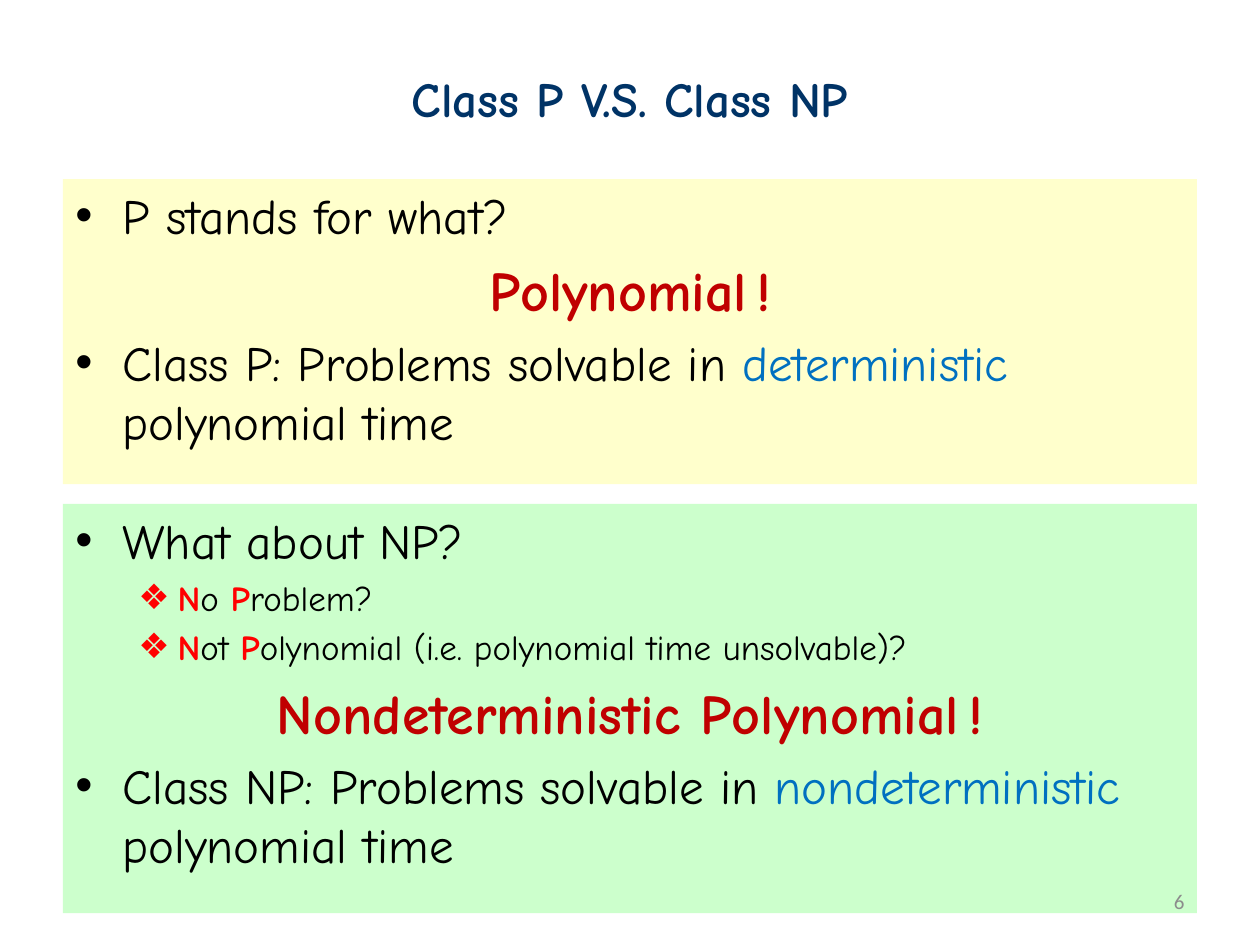
from lxml import etree
from pptx import Presentation
from pptx.dml.color import RGBColor
from pptx.enum.shapes import MSO_SHAPE
from pptx.enum.text import MSO_ANCHOR, PP_ALIGN
from pptx.oxml.ns import qn
from pptx.util import Cm, Pt

RECTANGLE = MSO_SHAPE.RECTANGLE
TOP, MIDDLE = MSO_ANCHOR.TOP, MSO_ANCHOR.MIDDLE
LEFT, CENTER, RIGHT = PP_ALIGN.LEFT, PP_ALIGN.CENTER, PP_ALIGN.RIGHT

NAVY = RGBColor(0x00, 0x33, 0x66)
BLACK = RGBColor(0x00, 0x00, 0x00)
RED = RGBColor(0xFF, 0x00, 0x00)
DARK_RED = RGBColor(0xC0, 0x00, 0x00)
BLUE = RGBColor(0x00, 0x70, 0xC0)
GRAY = RGBColor(0x8C, 0x8C, 0x8C)
YELLOW = RGBColor(0xFF, 0xFF, 0xCC)
GREEN = RGBColor(0xCC, 0xFF, 0xCC)

FONT = "Comic Neue"
MARGIN = Cm(1.27)
CONTENT_WIDTH = Cm(22.86)


def add_span(para, text, size, color=BLACK, bold=False, font=FONT):
    span = para.add_run()
    span.text = text
    span.font.name = font
    span.font.size = Pt(size)
    span.font.bold = bold
    span.font.color.rgb = color


def next_para(frame, size):
    """Return the empty first paragraph, or a new one, spaced by its text size."""
    para = frame.paragraphs[0]
    if para.runs:
        para = frame.add_paragraph()
    para.alignment = LEFT
    para.space_before = Pt(round(size * 0.2, 1))
    return para


def set_bullet(para, char, font, margin, hanging):
    properties = para._p.get_or_add_pPr()
    properties.set("marL", str(margin))
    properties.set("indent", str(-hanging))
    etree.SubElement(properties, qn("a:buFont")).set("typeface", font)
    etree.SubElement(properties, qn("a:buChar")).set("char", char)


def add_point(frame, *spans):
    """Add a main bullet from (text, color) pairs."""
    para = next_para(frame, 28)
    set_bullet(para, "•", "Arial", Cm(0.95), Cm(0.95))
    for text, color in spans:
        add_span(para, text, 28, color)


def add_guess(frame, *words):
    """Add a sub-bullet whose first two words have a red initial."""
    para = next_para(frame, 20)
    para.level = 1
    set_bullet(para, "❖", "DejaVu Sans", Cm(2.06), Cm(0.79))
    for word in words:
        add_span(para, word[0], 20, RED, bold=True)
        add_span(para, word[1:], 20)


def add_answer(frame, text):
    para = next_para(frame, 32)
    para.alignment = CENTER
    for part, size in ((text, 32), (" ", 14), ("!", 32)):
        add_span(para, part, size, DARK_RED, bold=True)


def add_definition(frame, name, manner):
    add_point(frame, (f"Class {name}: Problems solvable in ", BLACK),
              (manner, BLUE), (" polynomial time", BLACK))


def add_panel(page, top, height, color):
    panel = page.shapes.add_shape(RECTANGLE, MARGIN, top, CONTENT_WIDTH, height)
    panel.shadow.inherit = False
    panel.fill.solid()
    panel.fill.fore_color.rgb = color
    panel.line.fill.background()
    frame = panel.text_frame
    frame.word_wrap = True
    frame.vertical_anchor = TOP
    return frame


def set_title(page, text):
    title = page.shapes.title
    title.left, title.top = MARGIN, Cm(0.76)
    title.width, title.height = CONTENT_WIDTH, Cm(2.41)
    title.text_frame.vertical_anchor = MIDDLE
    para = title.text_frame.paragraphs[0]
    para.alignment = CENTER
    add_span(para, text, 28, NAVY, bold=True)


def add_page_number(page, number):
    box = page.shapes.add_textbox(Cm(18.21), Cm(17.65), Cm(5.92), Cm(1.02))
    box.text_frame.word_wrap = True
    box.text_frame.vertical_anchor = MIDDLE
    para = box.text_frame.paragraphs[0]
    para.alignment = RIGHT
    add_span(para, number, 12, GRAY, font="Calibri")


def main():
    deck = Presentation()
    deck.slide_width, deck.slide_height = Cm(25.4), Cm(19.05)
    page = deck.slides.add_slide(deck.slide_layouts[5])
    set_title(page, "Class P V.S. Class NP")

    p_frame = add_panel(page, Cm(3.61), Cm(6.15), YELLOW)
    add_point(p_frame, ("P stands for what?", BLACK))
    add_answer(p_frame, "Polynomial")
    add_definition(p_frame, "P", "deterministic")

    np_frame = add_panel(page, Cm(10.16), Cm(8.25), GREEN)
    add_point(np_frame, ("What about NP?", BLACK))
    add_guess(np_frame, "No ", "Problem?")
    add_guess(np_frame, "Not ", "Polynomial (i.e. polynomial time unsolvable)?")
    add_answer(np_frame, "Nondeterministic Polynomial")
    add_definition(np_frame, "NP", "nondeterministic")

    add_page_number(page, "6")
    deck.save("out.pptx")


if __name__ == "__main__":
    main()
